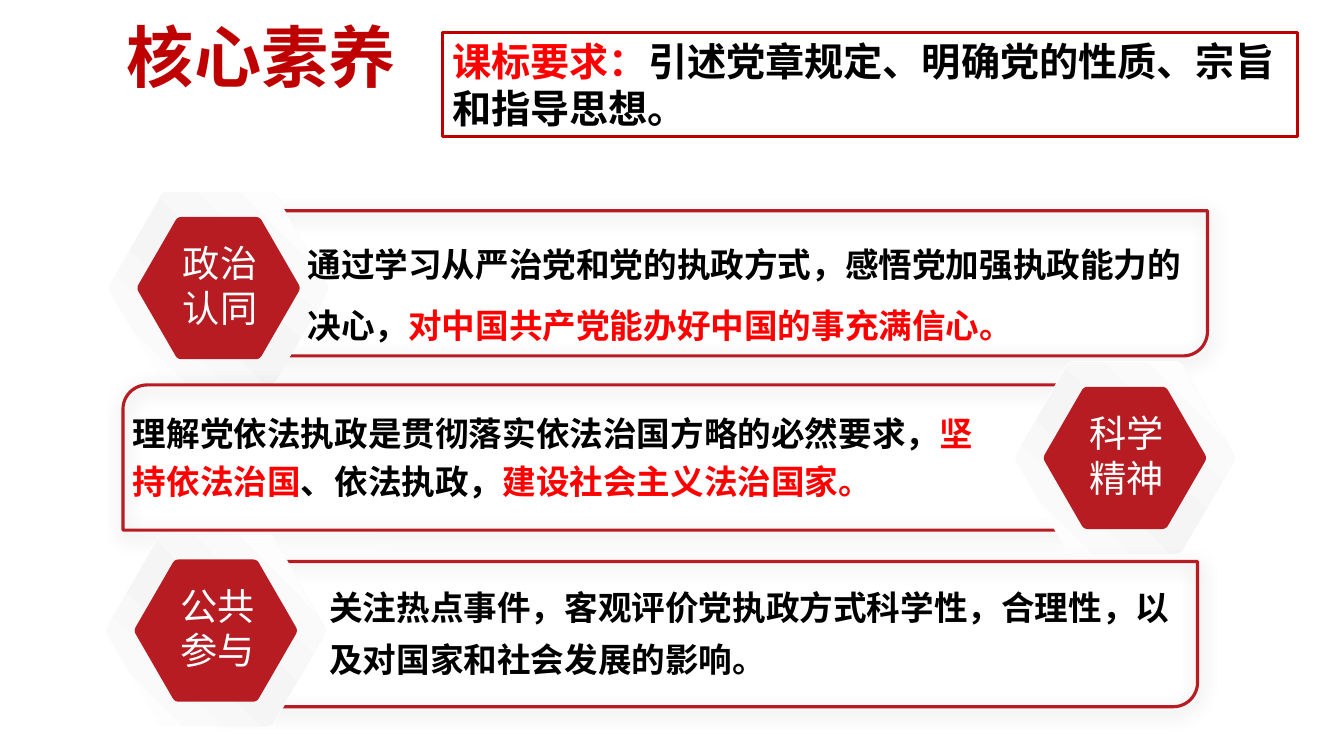
import math

from lxml import etree
from pptx import Presentation
from pptx import util as u
from pptx.dml.color import RGBColor
from pptx.enum import shapes, text
from pptx.oxml import parse_xml
from pptx.oxml.ns import qn

FONT = "Noto Sans CJK SC"
RED, BRIGHT, BLACK, WHITE = "B61C22", "FF0000", "000000", "FFFFFF"
NAMESPACE = 'xmlns:a="http://schemas.openxmlformats.org/drawingml/2006/main"'
GRADIENT = f"""<a:gradFill {NAMESPACE} rotWithShape="1"><a:gsLst>
<a:gs pos="0"><a:srgbClr val="FFFFFF"/></a:gs>
<a:gs pos="47000"><a:srgbClr val="F5F5F5"/></a:gs>
<a:gs pos="100000"><a:srgbClr val="FFFFFF"/></a:gs>
</a:gsLst><a:lin ang="18900000" scaled="0"/></a:gradFill>"""
SHADOW = f"""<a:effectLst {NAMESPACE}>
<a:outerShdw blurRad="165100" dist="38100" dir="5400000" algn="t" rotWithShape="0">
<a:srgbClr val="000000"><a:alpha val="22000"/></a:srgbClr></a:outerShdw></a:effectLst>"""

# Box: left, top, width, height in cm; hexagon: centre; label: width;
# words: left, top, width, height from the frame's corner
ROWS = [
    dict(box=(5.41, 5.31, 25.02, 3.66), center=(5.51, 7.26), label="政治\n认同",
         label_width=3.76, backed=False, words=(1.96, 0.15, 23.34, 3.28),
         insets=(0.38, 0.18), spacing=1.5,
         pieces=[("通过学习从严治党和党的执政方式，感悟党加强执政能力的决心，", BLACK),
                 ("对中国共产党能办好中国的事充满信心。", BRIGHT)]),
    dict(box=(3.1, 9.7, 25.4, 3.66), center=(28.35, 11.54), label="科学\n精神",
         label_width=2.57, backed=True, words=(0, 0.36, 22.28, 4.06),
         insets=(0.25, 0.13), spacing=1.2,
         pieces=[("理解党依法执政是贯彻落实依法治国方略的必然要求，", BLACK),
                 ("坚持依法治国", BRIGHT), ("、依法执政，", BLACK),
                 ("建设社会主义法治国家。", BRIGHT)]),
    dict(box=(5.41, 14.15, 24.77, 3.66), center=(5.44, 15.89), label="公共\n参与",
         label_width=3.35, backed=True, words=(2.51, 0.15, 22.23, 2.9),
         insets=(0.38, 0.18), spacing=1.3,
         pieces=[("关注热点事件，客观评价党执政方式科学性，合理性，"
                  "以及对国家和社会发展的影响。", BLACK)]),
]


def color(value):
    return RGBColor.from_string(value)


def cm(values):
    return [u.Cm(value) for value in values]


def format_run(run, size, value, bold):
    run.font.size = u.Pt(size)
    run.font.bold = bold
    run.font.color.rgb = color(value)
    run.font.name = FONT
    etree.SubElement(run.font._element, qn("a:ea")).set("typeface", FONT)


def prepare_frame(shape, insets=(0.25, 0.13)):
    frame = shape.text_frame
    frame.word_wrap = True
    frame.auto_size = text.MSO_AUTO_SIZE.NONE
    frame.vertical_anchor = text.MSO_ANCHOR.TOP
    frame.margin_left = frame.margin_right = u.Cm(insets[0])
    frame.margin_top = frame.margin_bottom = u.Cm(insets[1])
    return frame


def write_pieces(frame, pieces, size, spacing=None):
    paragraph = frame.paragraphs[0]
    paragraph.alignment = text.PP_ALIGN.LEFT
    if spacing:
        paragraph.line_spacing = spacing
    for words, value in pieces:
        run = paragraph.add_run()
        run.text = words
        format_run(run, size, value, True)


def add_outline(slide, kind, box, line_color):
    shape = slide.shapes.add_shape(kind, *cm(box))
    shape.shadow.inherit = False
    shape.fill.background()
    shape.line.color.rgb = color(line_color)
    shape.line.width = u.Pt(2.25)
    return shape


def add_hexagon(group, center, radius):
    """Regular hexagon whose corners are rounded by quadratic curves."""
    corners = [(center[0] + radius * math.cos(math.radians(angle)),
                center[1] + radius * math.sin(math.radians(angle)))
               for angle in range(0, 360, 60)]
    points = []
    for index, corner in enumerate(corners):
        before, after = corners[index - 1], corners[(index + 1) % 6]
        start, end = ([c + 0.05 * (n - c) for c, n in zip(corner, near)]
                      for near in (before, after))
        for t in (0, 0.25, 0.5, 0.75, 1):
            points.append(cm((1 - t) ** 2 * s + 2 * t * (1 - t) * c + t * t * e
                             for s, c, e in zip(start, corner, end)))
    builder = group.shapes.build_freeform(*points[0])
    builder.add_line_segments(points[1:], close=True)
    hexagon = builder.convert_to_shape()
    hexagon.shadow.inherit = False
    hexagon.line.fill.background()
    return hexagon


def add_badge(slide, center, label, label_width, backed):
    group = slide.shapes.add_group_shape()
    # Pale rim and red core
    if backed:
        backing = add_hexagon(group, center, 2.82)
        backing.fill.solid()
        backing.fill.fore_color.rgb = color(WHITE)
    rim = add_hexagon(group, center, 2.79)
    rim._element.spPr.find(qn("a:custGeom")).addnext(parse_xml(GRADIENT))
    core = add_hexagon(group, center, 2.07)
    core.fill.solid()
    core.fill.fore_color.rgb = color(RED)
    # Two-line label
    box = group.shapes.add_textbox(
        *cm((center[0] - 1.15, center[1] - 1.33, label_width, 2.54)))
    frame = prepare_frame(box)
    frame.text = label
    for paragraph in frame.paragraphs:
        format_run(paragraph.runs[0], 26.6, WHITE, False)


def add_row(slide, box, center, label, label_width, backed, words, insets, spacing, pieces):
    outline = add_outline(slide, shapes.MSO_SHAPE.ROUND_2_DIAG_RECTANGLE, box, RED)
    properties = outline._element.spPr
    properties.replace(properties.find(qn("a:effectLst")), parse_xml(SHADOW))
    add_badge(slide, center, label, label_width, backed)
    left, top, width, height = words
    body = slide.shapes.add_textbox(*cm((box[0] + left, box[1] + top, width, height)))
    write_pieces(prepare_frame(body, insets), pieces, 24, spacing)


def add_heading(slide, box):
    title = slide.shapes.title
    title.left, title.top, title.width, title.height = cm(box)
    write_pieces(prepare_frame(title), [("核心素养", "BE0000")], 48)


def add_requirement(slide, box):
    shape = add_outline(slide, shapes.MSO_SHAPE.RECTANGLE, box, "C00000")
    write_pieces(prepare_frame(shape), [
        ("课标要求：", BRIGHT),
        ("引述党章规定、明确党的性质、宗旨和指导思想。", BLACK)], 28)


def main():
    presentation = Presentation()
    presentation.slide_width, presentation.slide_height = cm((33.87, 19.05))
    slide = presentation.slides.add_slide(presentation.slide_layouts[5])
    add_heading(slide, (2.95, 0.25, 22.33, 2.31))
    for row in ROWS:
        add_row(slide, **row)
    add_requirement(slide, (11.15, 0.81, 21.56, 2.64))
    presentation.save("out.pptx")


if __name__ == "__main__":
    main()
